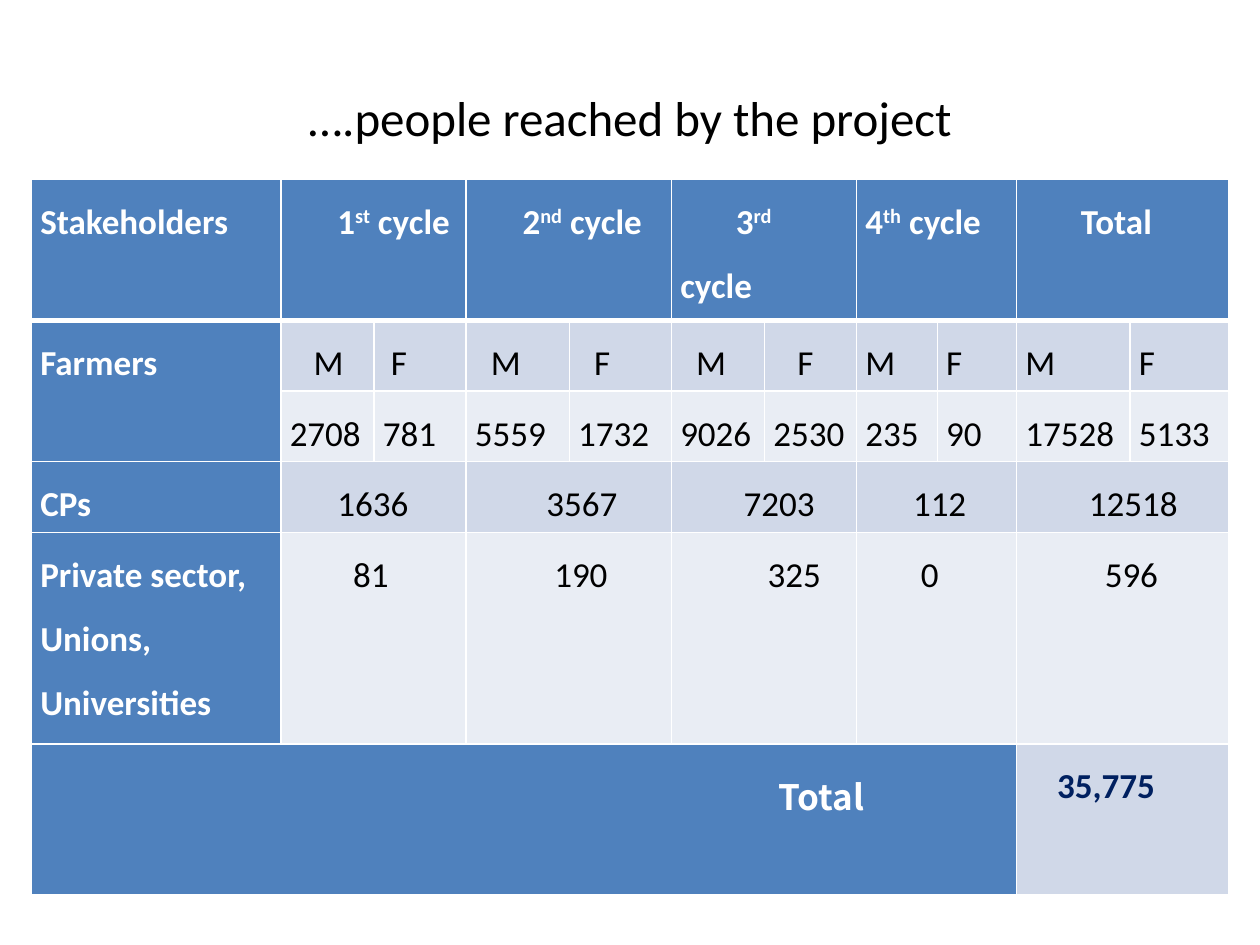
from lxml import etree
from pptx import Presentation
from pptx.dml.color import RGBColor
from pptx.enum.text import MSO_ANCHOR, PP_ALIGN
from pptx.oxml.ns import qn
from pptx.util import Emu, Inches, Pt

MID = MSO_ANCHOR.MIDDLE
CENTER, LEFT = PP_ALIGN.CENTER, PP_ALIGN.LEFT
WHITE = RGBColor(0xFF, 0xFF, 0xFF)
BLACK = RGBColor(0, 0, 0)
BLUE = RGBColor(0x4F, 0x81, 0xBD)
NAVY = RGBColor(0x00, 0x20, 0x60)
DARK = RGBColor(0xD0, 0xD8, 0xE8)
PALE = RGBColor(0xE9, 0xED, 0xF4)
FONT, WIDE = "Calibri", "Noto Sans CJK JP"

COLS = [1.98, 0.74, 0.73, 0.82, 0.81, 0.74, 0.73, 0.64, 0.63, 0.9, 0.78]
ROWS = [1.12, 0.56, 0.56, 0.56, 1.68, 1.2]
BANDS = [BLUE, DARK, PALE, DARK, PALE, DARK]
STEP = 0.063

HEADS = [("1", "st", 6), ("2", "nd", 6), ("3", "rd", 7), ("4", "th", 0)]
SEXES = [("M", 3), ("F", 1), ("M", 2), ("F", 2), ("M", 2), ("F", 3),
         ("M", 0), ("F", 0), ("M", 0), ("F", 0)]
COUNTS = ["2708", "781", "5559", "1732", "9026", "2530", "235", "90",
          "17528", "5133"]
SUMS = {
    3: ("CPs", [("1636", 6), ("3567", 9), ("7203", 8), ("112", 6),
                ("12518", 8)]),
    4: ("Private sector, Unions, Universities",
        [("81", 8), ("190", 10), ("325", 11), ("0", 7), ("596", 10)]),
}


def write(frame, text, size=20, color=BLACK, bold=False, font=FONT,
          align=LEFT, lead=1.5, shift=0, sup="", tail=""):
    """Put one formatted paragraph in a text frame."""
    para = frame.paragraphs[0]
    para.alignment, para.line_spacing = align, lead
    if shift:
        props = para._p.get_or_add_pPr()
        props.set("marL", "0")
        props.set("indent", str(Inches(shift * STEP)))
    for part, base in ((text, 0), (sup, 30000), (tail, 0)):
        if part:
            run = para.add_run()
            run.text = part
            run.font.size, run.font.name, run.font.bold = Pt(size), font, bold
            run.font.color.rgb = color
            if base:
                run._r.get_or_add_rPr().set("baseline", str(base))


def edge(cell, side, width):
    """Draw one white border of a cell."""
    line = etree.SubElement(cell._tc.get_or_add_tcPr(), qn(f"a:ln{side}"),
                            w=str(Pt(width)))
    fill = etree.SubElement(line, qn("a:solidFill"))
    etree.SubElement(fill, qn("a:srgbClr"), val=str(WHITE))


def style(cell, row, col):
    """Set margins, borders and fill of a cell by its place."""
    cell.margin_left = cell.margin_right = Inches(0.07)
    cell.margin_top = cell.margin_bottom = 0
    heavy = {"T": row == 1, "B": row == 0}
    for side in "LRTB":
        edge(cell, side, 3 if heavy.get(side) else 1)
    head = col == 0 or (row == 5 and col < 9)
    cell.fill.solid()
    cell.fill.fore_color.rgb = BLUE if head else BANDS[row]


def add_grid(slide, left, top, width, height):
    """Build the empty table with its merged cells."""
    grid = slide.shapes.add_table(len(ROWS), len(COLS), left, top, width,
                                  height).table
    grid.first_row = grid.horz_banding = False
    for col, share in zip(grid.columns, COLS):
        col.width = Emu(int(width * share / sum(COLS)))
    for row, share in zip(grid.rows, ROWS):
        row.height = Emu(int(height * share / sum(ROWS)))
    for row in range(len(ROWS)):
        for col in range(len(COLS)):
            style(grid.cell(row, col), row, col)
    for row in (0, 3, 4):
        for col in range(1, len(COLS), 2):
            grid.cell(row, col).merge(grid.cell(row, col + 1))
    for start, end in (((1, 0), (2, 0)), ((5, 0), (5, 8)), ((5, 9), (5, 10))):
        grid.cell(*start).merge(grid.cell(*end))
    return grid


def add_reach(slide, *box):
    """Fill the table of people reached in the given box."""
    grid = add_grid(slide, *box)

    def put(row, col, text, **look):
        """Write text in one cell of the table."""
        write(grid.cell(row, col).text_frame, text, **look)

    label = {"color": WHITE, "bold": True}
    put(0, 0, "Stakeholders", **label)
    for num, (text, sup, shift) in enumerate(HEADS):
        put(0, 1 + 2 * num, text, sup=sup, tail=" cycle", shift=shift, **label)
    put(0, 9, "Total", shift=7, **label)
    put(1, 0, "Farmers", **label)
    for col, ((sex, shift), count) in enumerate(zip(SEXES, COUNTS), 1):
        put(1, col, sex, shift=shift)
        put(2, col, count)
    for row, (name, sums) in SUMS.items():
        put(row, 0, name, **label)
        for num, (text, shift) in enumerate(sums):
            put(row, 1 + 2 * num, text, shift=shift)
    put(5, 0, "Total", font=WIDE, shift=93, **label)
    put(5, 9, "35,775", color=NAVY, bold=True, shift=4)


def add_title(slide, left, top, width, height):
    """Place and write the title."""
    title = slide.shapes.title
    title.left, title.top, title.width, title.height = left, top, width, height
    title.text_frame.vertical_anchor = MID
    write(title.text_frame, "….people reached by the project", size=28,
          align=CENTER, lead=1)


def main():
    """Build and save the slide."""
    deck = Presentation()
    deck.slide_width, deck.slide_height = Inches(10), Inches(7.5)
    slide = deck.slides.add_slide(deck.slide_layouts[5])
    wide, high = deck.slide_width, deck.slide_height
    add_title(slide, int(wide * 0.05), int(high * 0.04), int(wide * 0.9),
              int(high / 6))
    add_reach(slide, int(wide * 0.025), int(high * 0.19), int(wide * 0.95),
              Inches(sum(ROWS)))
    deck.save("out.pptx")


if __name__ == "__main__":
    main()
